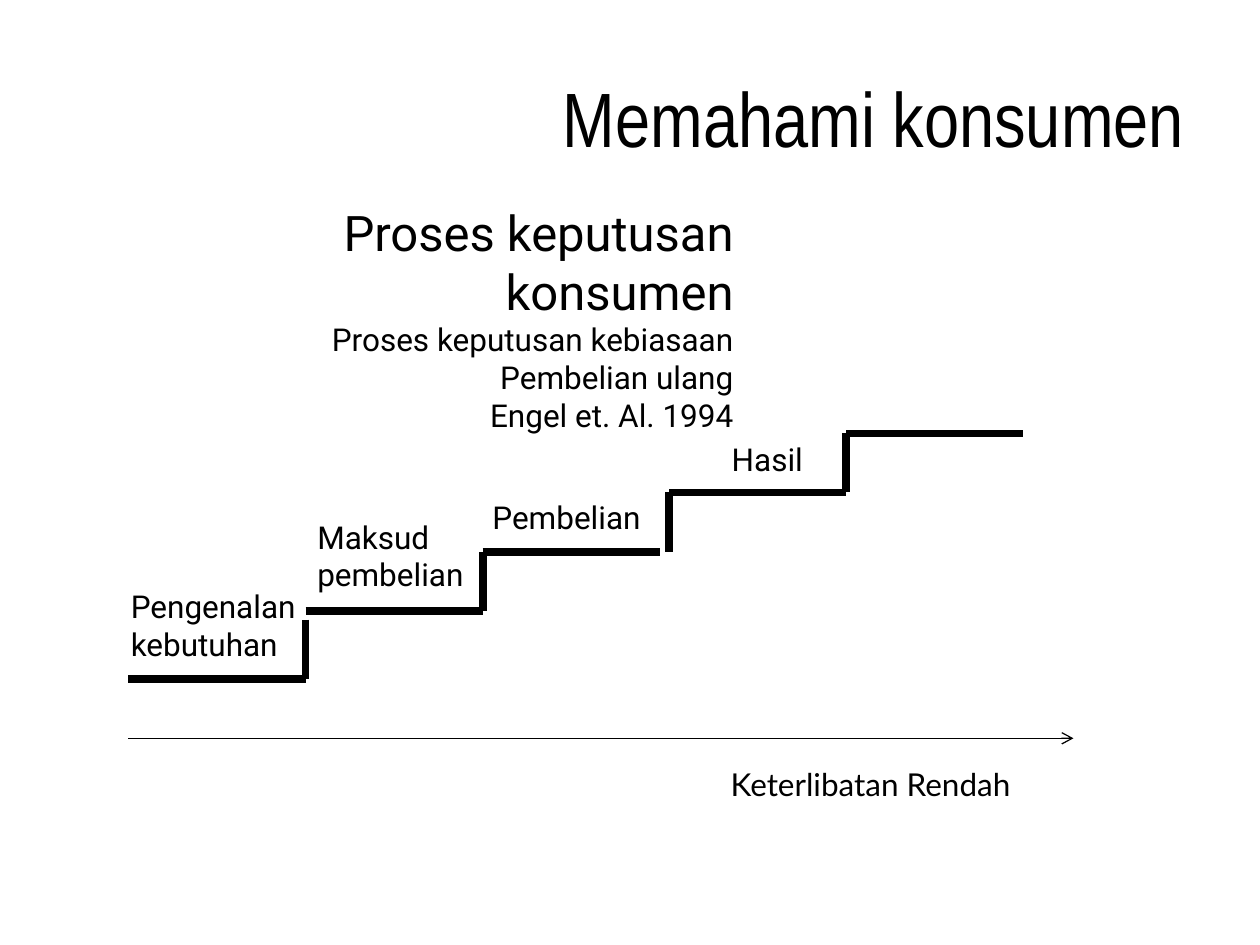
from pptx import Presentation
from pptx.dml.color import RGBColor
from pptx.enum.shapes import MSO_CONNECTOR
from pptx.enum.text import MSO_ANCHOR, PP_ALIGN as Al
from pptx.oxml.ns import qn
from pptx.util import Inches, Pt
from lxml.etree import SubElement

COLORS = {"ink": "000000"}
WIDTH, HEIGHT = 10, 7.5
STEPS, TREAD, RISE = 5, 14.05, 6.25
STAIR_LEFT, STAIR_TOP = 10.2, 45.87
COLUMN_GAP, FIRST_DROP = 0.75, 0.94


def px(share):
    return Inches(WIDTH * share / 100)


def py(share):
    return Inches(HEIGHT * share / 100)


def add_text(s, box, lines, font="Roboto", align=Al.LEFT, anchor=MSO_ANCHOR.TOP):
    x, y, w, h = box
    tf = s.shapes.add_textbox(px(x), py(y), px(w), py(h)).text_frame
    tf.word_wrap = True
    tf.vertical_anchor = anchor
    for i, (text, size) in enumerate(lines):
        p = tf.add_paragraph() if i else tf.paragraphs[0]
        p.alignment = align
        r = p.add_run()
        r.text = text
        r.font.name = font
        r.font.size = Pt(size)
        r.font.color.rgb = RGBColor.from_string(COLORS["ink"])


def add_line(s, x1, y1, x2, y2, width=4.5, arrow=False):
    c = s.shapes.add_connector(MSO_CONNECTOR.STRAIGHT, px(x1), py(y1), px(x2), py(y2))
    c.line.color.rgb = RGBColor.from_string(COLORS["ink"])
    c.line.width = Pt(width)
    if arrow:
        SubElement(c.line._get_or_add_ln(), qn("a:tailEnd"), type="arrow")
    SubElement(c._element.spPr, qn("a:effectLst"))


def add_stairs(s):
    for i in range(STEPS):
        left = STAIR_LEFT + TREAD * i + (COLUMN_GAP if i > 2 else 0)
        right = left + TREAD
        y = STAIR_TOP + RISE * (STEPS - 1 - i) + (FIRST_DROP if i == 0 else 0)
        add_line(s, left, y, right, y)
        if i < STEPS - 1:
            riser = right + (COLUMN_GAP if i == 2 else 0)
            add_line(s, riser, y - RISE, riser, y)


def add_step_labels(s):
    labels = [
        ("Pengenalan kebutuhan", 9.4, 61.47, 9.47, Al.LEFT),
        ("Maksud pembelian", 24.2, 54.13, 9.47, Al.LEFT),
        ("Pembelian", 38.1, 52, 5.33, Al.LEFT),
        ("Hasil", 53.1, 45.87, 5.33, Al.CENTER),
    ]
    for text, x, y, h, align in labels:
        add_text(s, (x, y, 15.6, h), [(text, 18)], align=align)


def main():
    prs = Presentation()
    prs.slide_width, prs.slide_height = Inches(WIDTH), Inches(HEIGHT)
    s = prs.slides.add_slide(prs.slide_layouts[6])
    add_text(s, (5, 4, 90, 16.67), [("Memahami konsumen", 44)],
             "Arial Narrow", Al.RIGHT, MSO_ANCHOR.MIDDLE)
    add_text(s, (7.8, 20.8, 51.4, 19.73), [
        ("Proses keputusan konsumen", 28),
        ("Proses keputusan kebiasaan", 18),
        ("Pembelian ulang", 18),
        ("Engel et. Al. 1994", 18),
    ], align=Al.RIGHT)
    add_step_labels(s)
    add_stairs(s)
    add_line(s, STAIR_LEFT, 78.13, 85.2, 78.13, 0.75, arrow=True)
    add_text(s, (57, 80.27, 25.8, 5.33), [("Keterlibatan Rendah", 18)], "Lato")
    prs.save("out.pptx")


if __name__ == "__main__":
    main()
